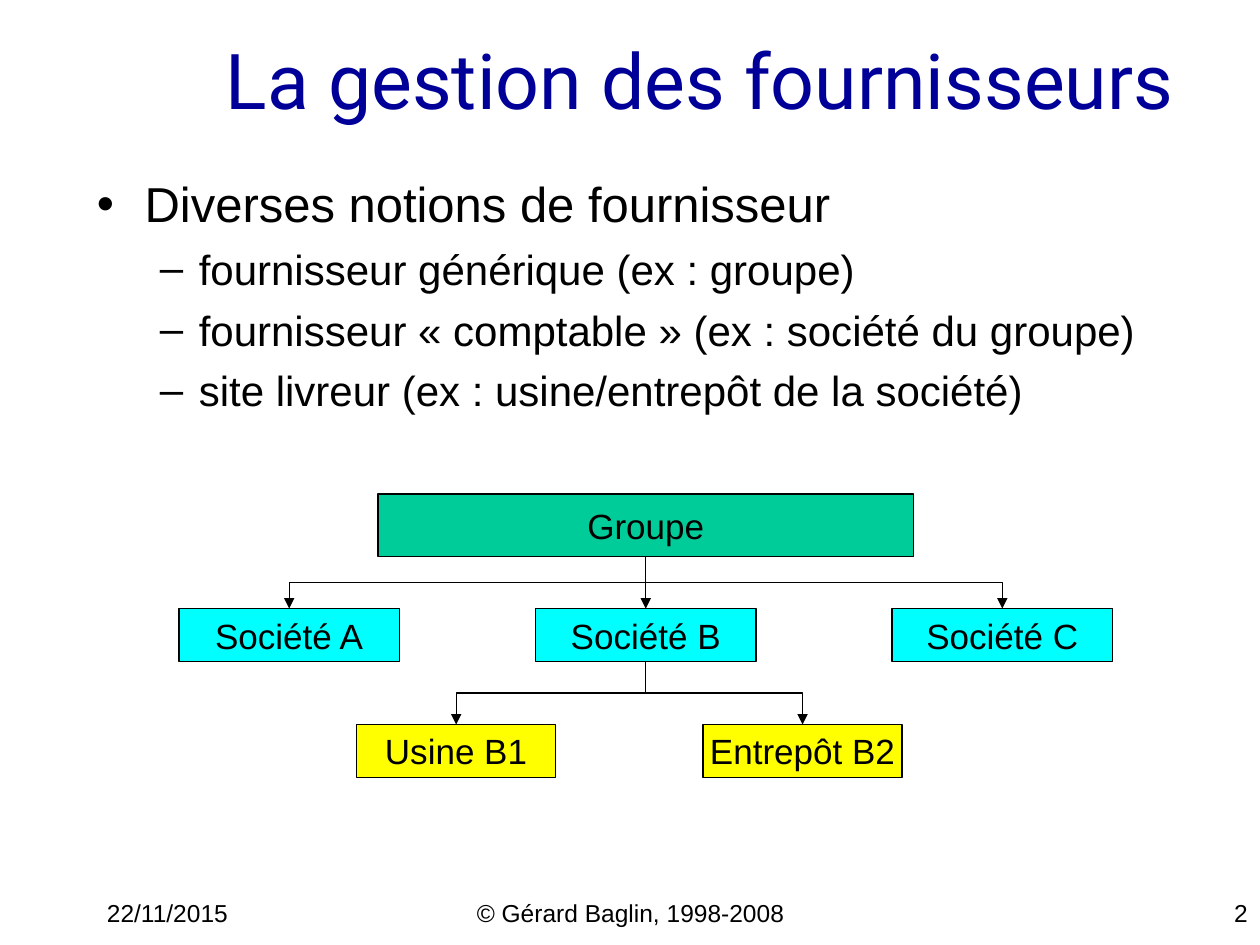
from lxml.etree import SubElement
from pptx import Presentation
from pptx.dml.color import RGBColor
from pptx.enum.shapes import MSO_CONNECTOR as Link, MSO_SHAPE as Shape
from pptx.enum.text import MSO_ANCHOR as Anchor, PP_ALIGN as Align
from pptx.oxml.ns import qn
from pptx.util import Inches, Pt

BLACK = RGBColor(0x00, 0x00, 0x00)
NAVY = RGBColor(0x00, 0x00, 0x99)
GREEN = RGBColor(0x00, 0xCC, 0x99)
CYAN = RGBColor(0x00, 0xFF, 0xFF)
YELLOW = RGBColor(0xFF, 0xFF, 0x00)


class Page:
    font = "Arial"
    line_width = Pt(0.75)

    def __init__(self, deck):
        self.shapes = deck.slides.add_slide(deck.slide_layouts[6]).shapes

    def style(self, para, size, color=BLACK, font=None, align=Align.LEFT):
        para.alignment = align
        para.font.name = font or self.font
        para.font.size = Pt(size)
        para.font.color.rgb = color

    def frame(self, left, top, width, height):
        box = self.shapes.add_textbox(Inches(left), Inches(top), Inches(width), Inches(height))
        box.text_frame.word_wrap = True
        return box.text_frame

    def text(self, place, words, size, anchor=Anchor.TOP, **look):
        frame = self.frame(*place)
        frame.vertical_anchor = anchor
        frame.text = words
        self.style(frame.paragraphs[0], size, **look)

    def bullets(self, place, items):
        levels = [("•", 28, 0.38, 0.38), ("–", 24, 0.81, 0.31)]
        frame = self.frame(*place)
        for index, (level, words) in enumerate(items):
            para = frame.add_paragraph() if index else frame.paragraphs[0]
            mark, size, margin, hang = levels[level]
            para.text = words
            para.level = level
            para.space_before = Pt(6)
            self.style(para, size)
            props = para._p.get_or_add_pPr()
            props.set("marL", str(Inches(margin)))
            props.set("indent", str(-Inches(hang)))
            SubElement(props, qn("a:buFont")).set("typeface", self.font)
            SubElement(props, qn("a:buChar")).set("char", mark)

    def node(self, words, center, top, width, height, color):
        box = self.shapes.add_shape(
            Shape.RECTANGLE, Inches(center - width / 2), Inches(top), Inches(width), Inches(height)
        )
        box.shadow.inherit = False
        box.fill.solid()
        box.fill.fore_color.rgb = color
        box.line.color.rgb = BLACK
        box.line.width = self.line_width
        frame = box.text_frame
        frame.word_wrap = False
        frame.vertical_anchor = Anchor.MIDDLE
        frame.text = words
        self.style(frame.paragraphs[0], 20, align=Align.CENTER)
        return box

    def arrow(self, parent, child):
        start_x, start_y = parent.left + parent.width // 2, parent.top + parent.height
        end_x, end_y = child.left + child.width // 2, child.top
        shift, drop = end_x - start_x, end_y - start_y
        if abs(shift) < Inches(0.02):
            line = self.shapes.add_connector(Link.STRAIGHT, start_x, start_y, start_x, end_y)
        else:
            side = 1 if shift > 0 else -1
            middle_x, middle_y = (start_x + end_x) // 2, (start_y + end_y) // 2
            half_width, half_height = side * drop // 2, abs(shift) // 2
            line = self.shapes.add_connector(
                Link.ELBOW,
                middle_x + half_width, middle_y - half_height,
                middle_x - half_width, middle_y + half_height,
            )
            turn = 270 if side > 0 else 90
            line._element.spPr.find(qn("a:xfrm")).set("rot", str(turn * 60000))
        line.line.color.rgb = BLACK
        line.line.width = self.line_width
        SubElement(line.line._get_or_add_ln(), qn("a:tailEnd")).set("type", "triangle")
        SubElement(line._element.spPr, qn("a:effectLst"))


def main():
    deck = Presentation()
    deck.slide_width, deck.slide_height = Inches(10), Inches(7.5)
    page = Page(deck)

    page.text((0.75, 7.08, 2.08, 0.25), "22/11/2015", 14)
    page.text((3.42, 7.08, 3.17, 0.25), "© Gérard Baglin, 1998-2008", 14, align=Align.CENTER)
    page.text((7.92, 7.08, 2.08, 0.25), "2", 14, align=Align.RIGHT)
    page.text((0, 0, 9.42, 1.25), "La gestion des fournisseurs", 44,
              anchor=Anchor.MIDDLE, color=NAVY, font="Roboto", align=Align.RIGHT)
    page.bullets((0.67, 1.33, 8.5, 2.58), [
        (0, "Diverses notions de fournisseur"),
        (1, "fournisseur générique (ex : groupe)"),
        (1, "fournisseur « comptable » (ex : société du groupe)"),
        (1, "site livreur (ex : usine/entrepôt de la société)"),
    ])

    axis, gap = 5.125, 2.83
    group = page.node("Groupe", axis, 3.92, 4.25, 0.5, GREEN)
    companies = [
        page.node(f"Société {letter}", axis + step * gap, 4.83, 1.75, 0.42, CYAN)
        for step, letter in zip((-1, 0, 1), "ABC")
    ]
    sites = [
        page.node(words, center, 5.75, 1.58, 0.42, YELLOW)
        for words, center in (("Usine B1", 3.62), ("Entrepôt B2", 6.37))
    ]
    for parent, children in ((group, companies), (companies[1], sites)):
        for child in children:
            page.arrow(parent, child)

    deck.save("out.pptx")


if __name__ == "__main__":
    main()
